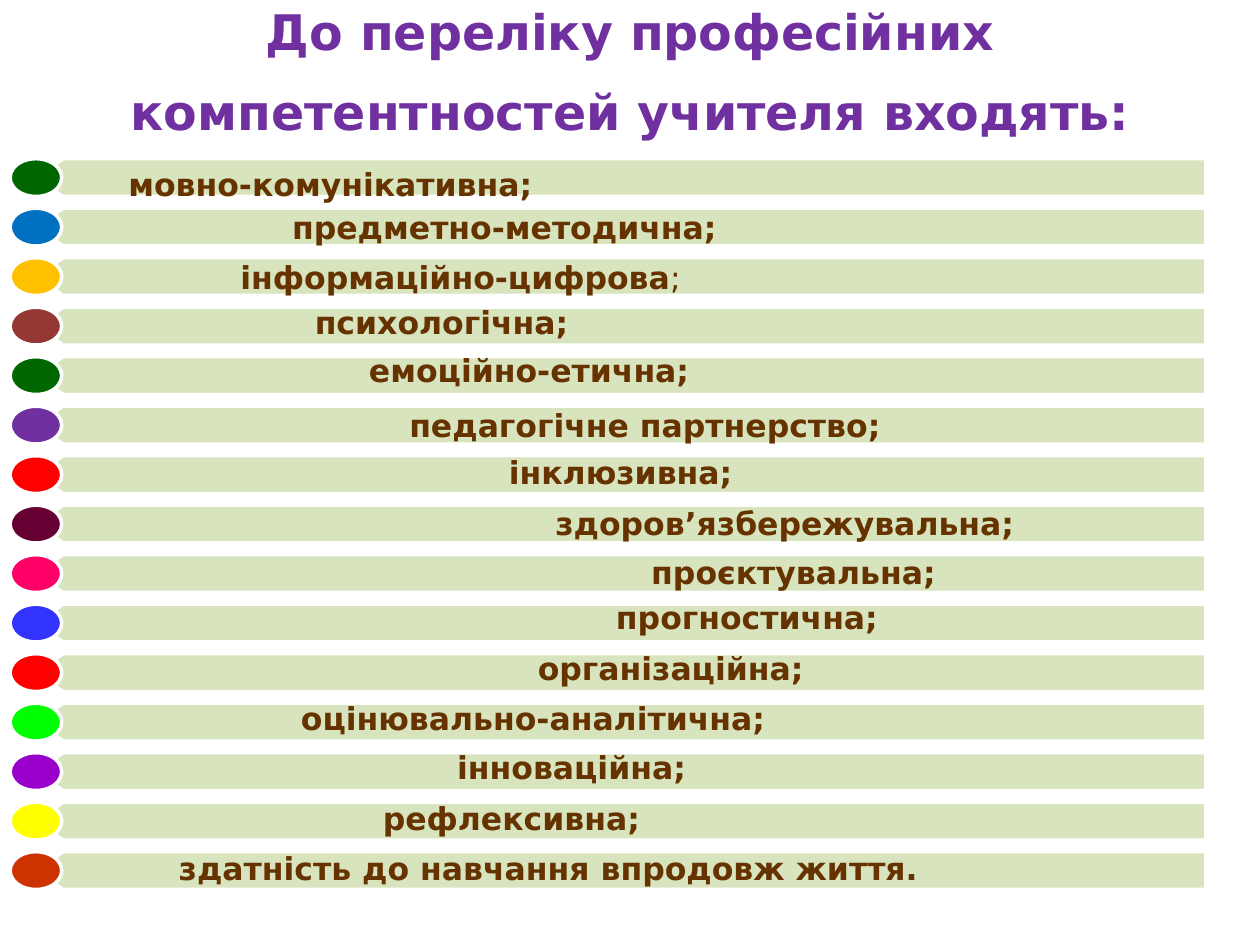
from dataclasses import dataclass
from typing import Any

from pptx import Presentation
from pptx.dml.color import RGBColor as Rgb
from pptx.enum.shapes import MSO_SHAPE as Shape
from pptx.enum.text import MSO_ANCHOR as Anchor, MSO_AUTO_SIZE as Fit, PP_ALIGN as Align
from pptx.util import Inches, Pt


@dataclass(frozen=True)
class Theme:
    face: str = "DejaVu Sans"
    title: str = "7030A0"
    text: str = "663300"
    bar: str = "D7E4BD"
    edge: str = "FFFFFF"
    head: int = 28
    body: int = 18
    lead: int = 46
    line: int = 2


@dataclass(frozen=True)
class Skill:
    text: str
    dot: str
    left: float
    top: float
    width: float
    tail: str = ""  # closing mark in regular weight


THEME = Theme()
SKILLS = [
    Skill("мовно-комунікативна;", "006600", 0.92, 1.26, 3.59),
    Skill("предметно-методична;", "0070C0", 2.22, 1.6, 3.65),
    Skill("інформаційно-цифрова", "FFC000", 1.81, 2, 3.88, ";"),
    Skill("психологічна;", "953735", 2.4, 2.36, 2.34),
    Skill("емоційно-етична;", "006600", 2.83, 2.74, 2.88),
    Skill("педагогічне партнерство;", "7030A0", 3.15, 3.17, 3.96),
    Skill("інклюзивна;", "FF0000", 3.94, 3.55, 2.11),
    Skill("здоров’язбережувальна;", "660033", 4.31, 3.95, 3.96),
    Skill("проєктувальна;", "FF0066", 5.07, 4.34, 2.58),
    Skill("прогностична;", "3333FF", 4.79, 4.7, 2.32),
    Skill("організаційна;", "FF0000", 4.17, 5.1, 2.35),
    Skill("оцінювально-аналітична;", "00FF00", 2.29, 5.5, 3.97),
    Skill("інноваційна;", "9900CC", 3.53, 5.89, 2.16),
    Skill("рефлексивна;", "FFFF00", 2.94, 6.29, 2.27),
    Skill("здатність до навчання впродовж життя.", "CC3300", 1.32, 6.69, 6.09),
]
FIRST, LAST, HIGH = 1.26, 6.76, 0.3
STEP = (LAST - FIRST) / (len(SKILLS) - 1)
TIP, NECK, END = 0.29, 0.5, 9.57


def apply(item: Any, form: dict[str, Any]) -> None:
    for name, value in form.items():
        setattr(item, name, value)


def style(font: Any, size: int, color: str) -> None:
    apply(font, {"name": THEME.face, "size": Pt(size), "bold": True})
    font.color.rgb = Rgb.from_string(color)


def paint(shape: Any, fill: str) -> None:
    shape.shadow.inherit = False
    shape.fill.solid()
    shape.fill.fore_color.rgb = Rgb.from_string(fill)
    shape.line.color.rgb = Rgb.from_string(THEME.edge)
    shape.line.width = Pt(THEME.line)


def add_title(slide: Any, text: str) -> None:
    title = slide.shapes.title
    apply(title, {"left": 0, "top": Inches(-0.11),
                  "width": Inches(10), "height": Inches(1.17)})
    frame = title.text_frame
    frame.text = text
    apply(frame, {"auto_size": Fit.NONE, "vertical_anchor": Anchor.MIDDLE})
    para = frame.paragraphs[0]
    apply(para, {"alignment": Align.CENTER, "line_spacing": Pt(THEME.lead)})
    for run in para.runs:
        style(run.font, THEME.head, THEME.title)


def add_bar(slide: Any, top: float, dot: str) -> None:
    """Draw a bar pointing left, with its coloured dot over the tip."""
    low = top + HIGH
    spots = [(NECK, low), (TIP, top + HIGH / 2), (NECK, top), (END, top)]
    path = slide.shapes.build_freeform(Inches(END), Inches(low))
    path.add_line_segments([(Inches(x), Inches(y)) for x, y in spots])
    paint(path.convert_to_shape(), THEME.bar)
    oval = slide.shapes.add_shape(
        Shape.OVAL, Inches(0.08), Inches(top), Inches(0.41), Inches(HIGH))
    paint(oval, dot)


def add_label(slide: Any, skill: Skill) -> None:
    box = slide.shapes.add_textbox(
        Inches(skill.left), Inches(skill.top), Inches(skill.width), Inches(0.4))
    frame = box.text_frame
    apply(frame, {"word_wrap": False, "auto_size": Fit.SHAPE_TO_FIT_TEXT})
    para = frame.paragraphs[0]
    for text, bold in ((skill.text, True), (skill.tail, False)):
        if text:
            run = para.add_run()
            run.text = text
            style(run.font, THEME.body, THEME.text)
            run.font.bold = bold


def main() -> None:
    deck = Presentation()
    apply(deck, {"slide_width": Inches(10), "slide_height": Inches(7.5)})
    slide = deck.slides.add_slide(deck.slide_layouts[5])
    add_title(slide, "До переліку професійних\vкомпетентностей учителя входять:")
    for row, skill in enumerate(SKILLS):
        add_bar(slide, FIRST + row * STEP, skill.dot)
    for skill in SKILLS:
        add_label(slide, skill)
    deck.save("out.pptx")


if __name__ == "__main__":
    main()
